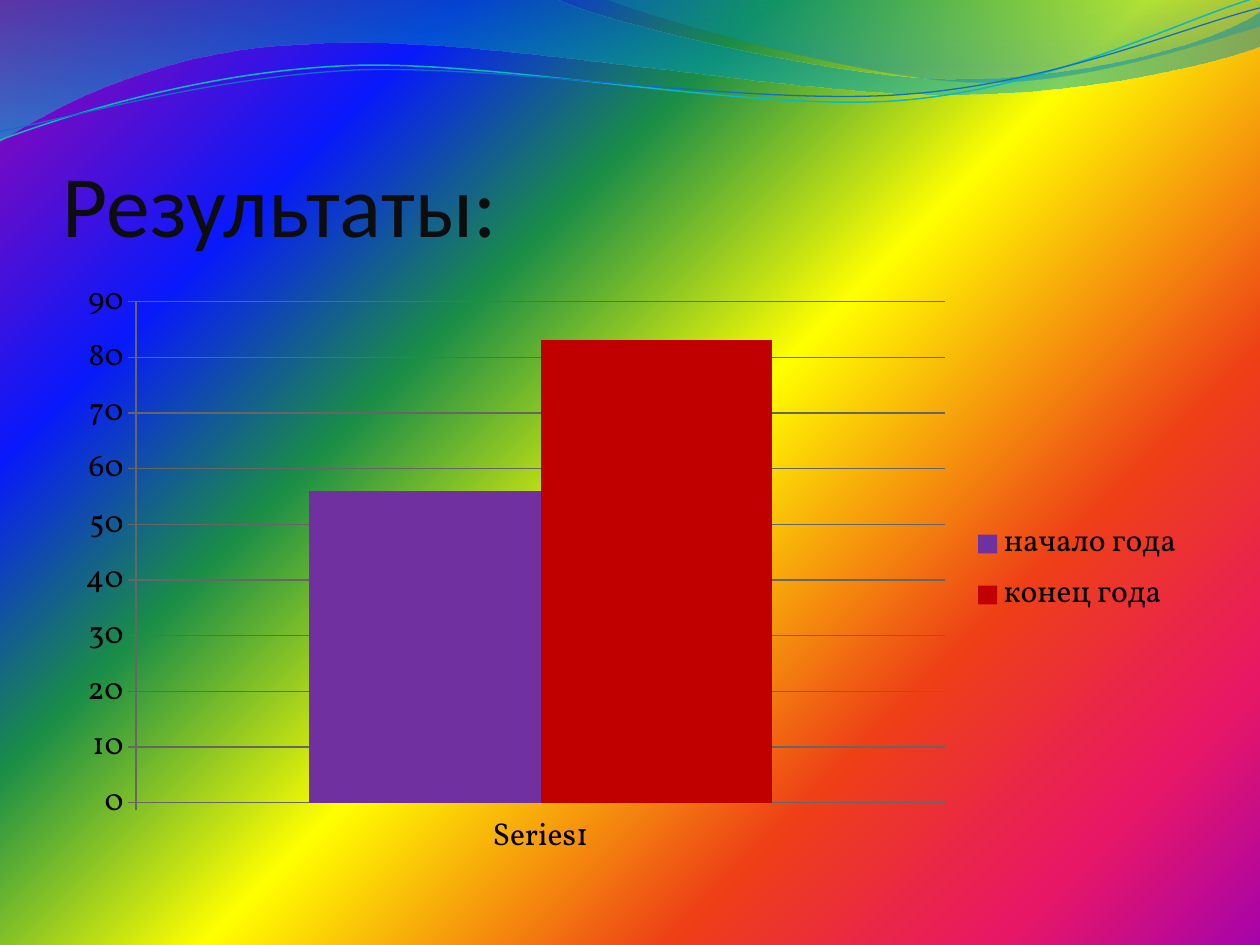
"""Builds the results slide: wave decoration, title and a two-column chart."""
from dataclasses import dataclass
from math import cos, radians, sin

from lxml.etree import SubElement
from pptx import Presentation
from pptx.chart.data import CategoryChartData
from pptx.dml.color import RGBColor
from pptx.enum.chart import XL_CHART_TYPE, XL_LEGEND_POSITION, XL_TICK_MARK
from pptx.enum.text import MSO_ANCHOR
from pptx.oxml.ns import qn
from pptx.util import Pt


@dataclass(frozen=True)
class Theme:
    title_font: str = "Calibri"
    title_size: int = 50
    title_color: str = "0D0D0D"
    chart_font: str = "Vollkorn"
    chart_size: int = 18
    chart_color: str = "000000"
    grid_color: str = "666666"
    rainbow: tuple = (
        (0, "A603AB", 100), (21, "0819FB", 100), (35, "1A8D48", 100),
        (52, "FFFF00", 100), (73, "EE3F17", 100), (88, "E81766", 100),
        (100, "A603AB", 100),
    )


THEME = Theme()
TITLE = "Результаты:"
TITLE_BOX = (36, 55.44, 648, 90)
CHART_BOX = (36, 152.64, 648, 345.6)
CATEGORIES = ["Series1"]
SERIES = [("начало года", [56], "7030A0"), ("конец года", [83], "C00000")]

WAVES = [
    {
        "steps": [
            (0, 0), (317, -1), (343, 12, 478, 45, 546, 45),
            (614, 45, 690, 27, 720, 6.5), (721, 26), (708, 32, 626, 55, 537, 54),
            (448, 54, 275, 20, 185, 24.5), (93, 26, 33, 60, -1, 81),
        ],
        "stops": [(0, "0074A1", 45), (100, "00C6CF", 55)],
    },
    {
        "steps": [(345, -1), (366, 8, 491, 45, 554, 47),
                  (616, 50, 692, 23, 720, 15), (720, 0)],
        "stops": [(0, "00A1A9", 30), (80, "008BBF", 45)],
    },
]
RIBBONS = [
    {
        "steps": [(0, 80), (35, 67, 114, 41, 199, 37.5),
                  (284, 34, 427, 64, 513, 57.5), (600, 51, 675, 11, 718.5, -1.5)],
        "center": (359.3, 41.4), "color": "0AB8BF", "width": 0.85,
    },
    {
        "steps": [(0, 75), (34, 69, 118, 44, 204, 40),
                  (290, 37, 430, 60.5, 516, 54), (602, 48, 677.5, 15, 720, 4.5)],
        "center": (359.6, 42.5), "color": "0F6FC6", "width": 0.75,
    },
]
RIBBON_TILT = 2.7


def rgb(color):
    return RGBColor.from_string(color)


def paint_gradient(fill, owner, stops, angle):
    fill.gradient()
    fill.gradient_angle = 360 - angle
    stop_list = next(owner.iter(qn("a:gsLst")))
    for old_stop in list(stop_list):
        stop_list.remove(old_stop)
    for position, color, opacity in stops:
        stop = SubElement(stop_list, qn("a:gs"), pos=str(position * 1000))
        tone = SubElement(stop, qn("a:srgbClr"), val=color)
        if opacity < 100:
            SubElement(tone, qn("a:alpha"), val=str(opacity * 1000))


def turn(point, center, degrees):
    dx, dy = point[0] - center[0], point[1] - center[1]
    c, s = cos(radians(degrees)), sin(radians(degrees))
    return center[0] + dx * c - dy * s, center[1] + dx * s + dy * c


def add_outline(slide, steps, close, center=(0, 0), tilt=0):
    groups = [
        [tuple(map(Pt, turn(pair, center, tilt))) for pair in zip(step[::2], step[1::2])]
        for step in steps
    ]
    anchors = [group[-1] for group in groups]
    builder = slide.shapes.build_freeform(*anchors[0])
    builder.add_line_segments(anchors[1:], close=close)
    shape = builder.convert_to_shape()
    shape.shadow.inherit = False
    segments = list(shape.element.iter(qn("a:lnTo")))
    for segment, group in zip(segments, groups[1:]):
        if len(group) == 3:
            curve = segment.getparent().makeelement(qn("a:cubicBezTo"))
            for x, y in group:
                SubElement(curve, qn("a:pt"), x=str(x - shape.left), y=str(y - shape.top))
            segment.getparent().replace(segment, curve)
    shape.rotation = -tilt
    return shape


def add_decoration(slide):
    for wave in WAVES:
        shape = add_outline(slide, wave["steps"], True)
        paint_gradient(shape.fill, shape.element, wave["stops"], 90)
        shape.line.fill.background()
    for ribbon in RIBBONS:
        shape = add_outline(slide, ribbon["steps"], False, ribbon["center"], RIBBON_TILT)
        shape.fill.background()
        shape.line.color.rgb = rgb(ribbon["color"])
        shape.line.width = Pt(ribbon["width"])


def add_title(slide):
    box = slide.shapes.add_textbox(*map(Pt, TITLE_BOX))
    frame = box.text_frame
    frame.word_wrap = True
    frame.vertical_anchor = MSO_ANCHOR.BOTTOM
    frame.margin_left = frame.margin_right = frame.margin_bottom = 0
    frame.margin_top = Pt(3.6)
    para = frame.paragraphs[0]
    span = para.add_run()
    span.text = TITLE
    span.font.name = THEME.title_font
    span.font.size = Pt(THEME.title_size)
    span.font.color.rgb = rgb(THEME.title_color)


def add_results_chart(slide):
    data = CategoryChartData()
    data.categories = CATEGORIES
    for name, values, color in SERIES:
        data.add_series(name, values)
    chart = slide.shapes.add_chart(
        XL_CHART_TYPE.COLUMN_CLUSTERED, *map(Pt, CHART_BOX), data
    ).chart
    chart.has_title = False
    chart.font.name = THEME.chart_font
    chart.font.size = Pt(THEME.chart_size)
    chart.font.color.rgb = rgb(THEME.chart_color)
    chart.has_legend = True
    chart.legend.position = XL_LEGEND_POSITION.RIGHT
    chart.legend.include_in_layout = False
    plot = chart.plots[0]
    plot.vary_by_categories = False
    plot.gap_width = 150
    for series, (name, values, color) in zip(plot.series, SERIES):
        series.format.fill.solid()
        series.format.fill.fore_color.rgb = rgb(color)
    for axis in (chart.category_axis, chart.value_axis):
        axis.major_tick_mark = XL_TICK_MARK.CROSS
        axis.format.line.color.rgb = rgb(THEME.grid_color)
    scale = chart.value_axis
    scale.has_major_gridlines = True
    scale.major_gridlines.format.line.color.rgb = rgb(THEME.grid_color)


def main():
    deck = Presentation()
    deck.slide_width, deck.slide_height = Pt(720), Pt(540)
    slide = deck.slides.add_slide(deck.slide_layouts[6])
    paint_gradient(slide.background.fill, slide.element, THEME.rainbow, 45)
    add_decoration(slide)
    add_title(slide)
    add_results_chart(slide)
    deck.save("out.pptx")


if __name__ == "__main__":
    main()
